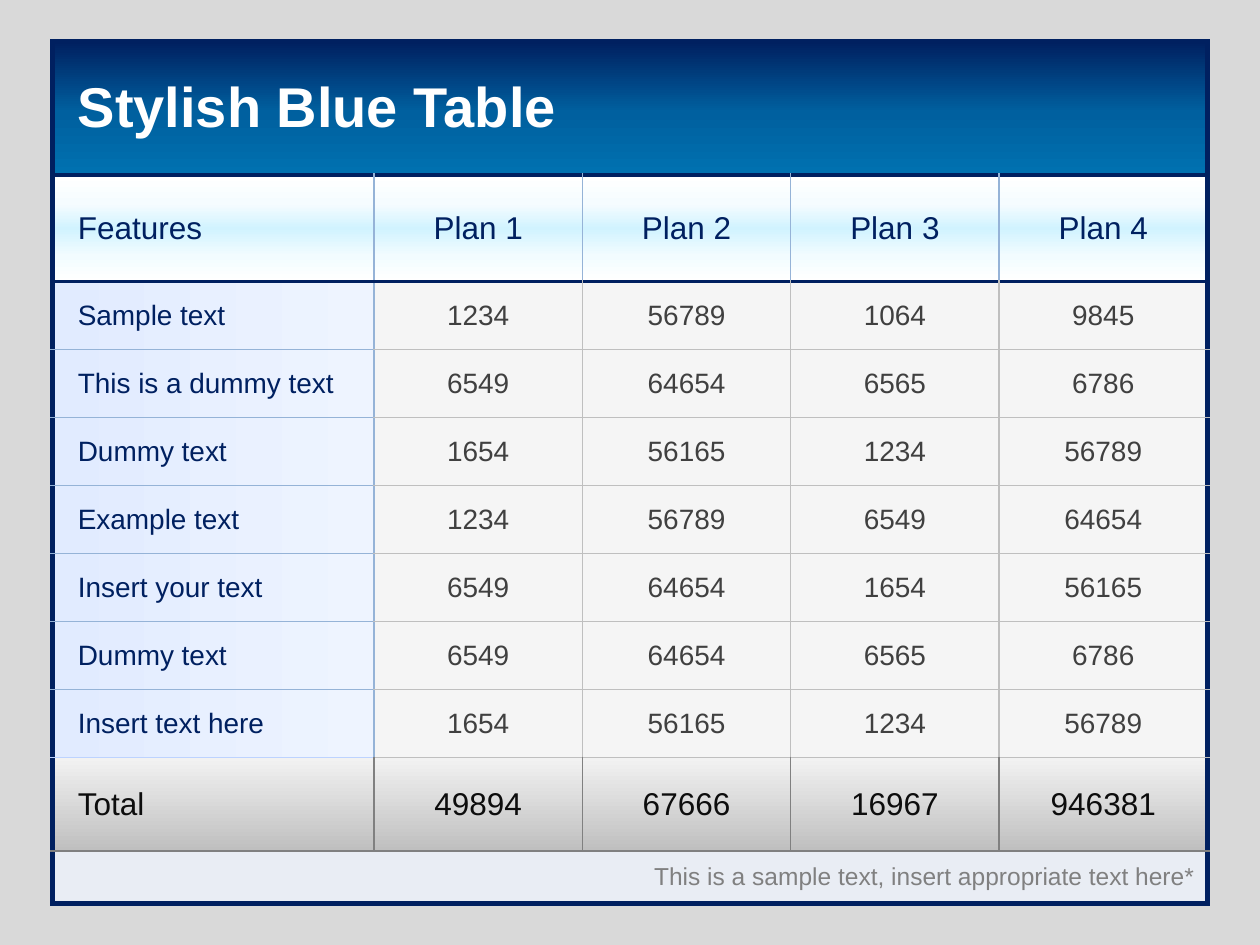
"""Build a slide with a blue pricing table of four plans."""
import lxml.etree
import pptx
import pptx.dml.color
import pptx.enum.text
import pptx.oxml.ns
import pptx.util

RGBColor = pptx.dml.color.RGBColor
Cm = pptx.util.Cm
Pt = pptx.util.Pt
PP_ALIGN = pptx.enum.text.PP_ALIGN
qn = pptx.oxml.ns.qn

NAVY = RGBColor(0x00, 0x20, 0x60)
OCEAN = RGBColor(0x00, 0x60, 0x9F)
BLUE = RGBColor(0x00, 0x71, 0xB0)
STEEL = RGBColor(0x95, 0xB3, 0xD7)
PALE = RGBColor(0xBD, 0xD3, 0xFF)
ICE = RGBColor(0xD1, 0xF3, 0xFF)
FROST = RGBColor(0xF5, 0xFC, 0xFF)
MIST = RGBColor(0xF2, 0xFC, 0xFF)
LAVENDER = RGBColor(0xE1, 0xEB, 0xFF)
LIGHT_LAVENDER = RGBColor(0xEE, 0xF4, 0xFF)
FOOTER = RGBColor(0xE9, 0xED, 0xF4)
WHITE = RGBColor(0xFF, 0xFF, 0xFF)
OFF_WHITE = RGBColor(0xF5, 0xF5, 0xF5)
LIGHT_GRAY = RGBColor(0xF2, 0xF2, 0xF2)
BACKDROP = RGBColor(0xD9, 0xD9, 0xD9)
SILVER = RGBColor(0xBF, 0xBF, 0xBF)
GRAY = RGBColor(0x80, 0x80, 0x80)
CHARCOAL = RGBColor(0x40, 0x40, 0x40)
BLACK = RGBColor(0x0D, 0x0D, 0x0D)

ROWS = [
    ("title", ["Stylish Blue Table"]),
    ("header", ["Features", "Plan 1", "Plan 2", "Plan 3", "Plan 4"]),
    ("body", ["Sample text", "1234", "56789", "1064", "9845"]),
    ("body", ["This is a dummy text", "6549", "64654", "6565", "6786"]),
    ("body", ["Dummy text", "1654", "56165", "1234", "56789"]),
    ("body", ["Example text", "1234", "56789", "6549", "64654"]),
    ("body", ["Insert your text", "6549", "64654", "1654", "56165"]),
    ("body", ["Dummy text", "6549", "64654", "6565", "6786"]),
    ("body", ["Insert text here", "1654", "56165", "1234", "56789"]),
    ("total", ["Total", "49894", "67666", "16967", "946381"]),
    ("footer", ["This is a sample text, insert appropriate text here*"]),
]
COLUMN_WIDTHS = [6.48, 4.2, 4.2, 4.2, 4.2]
ROW_HEIGHTS = {"title": 2.69, "header": 2.15, "body": 1.37, "total": 1.89, "footer": 1.05}
FONT_SIZES = {"title": 32, "header": 18, "body": 16, "total": 18, "footer": 14}
TEXT_COLORS = {"title": WHITE, "header": NAVY, "body": CHARCOAL, "total": BLACK, "footer": GRAY}
FILLS = {
    "title": (90, [(0, NAVY), (53, OCEAN), (100, BLUE)]),
    "header": (90, [(0, WHITE), (27, FROST), (50, ICE), (76, MIST), (100, WHITE)]),
    "label": (0, [(0, LAVENDER), (100, LIGHT_LAVENDER)]),
    "body": OFF_WHITE,
    "total": (270, [(0, SILVER), (100, LIGHT_GRAY)]),
    "footer": FOOTER,
}
FRAME = (NAVY, 3)
RULE = (NAVY, 2.25)
INNER_LINES = {"title": FRAME, "header": (STEEL, 1), "body": (SILVER, 1),
               "total": (GRAY, 1), "footer": FRAME}


def horizontal_line(edge, column):
    if edge in (0, len(ROWS)):
        return FRAME
    above, below = ROWS[edge - 1][0], ROWS[edge][0]
    if above in ("title", "header"):
        return RULE
    if below == "footer":
        return GRAY, 1
    if column:
        return SILVER, 1
    return (PALE if below == "total" else STEEL), 1


def vertical_line(kind, edge):
    if edge in (0, len(COLUMN_WIDTHS)):
        return FRAME
    return (STEEL, 1) if kind == "body" and edge == 1 else INNER_LINES[kind]


def add_color(parent, color):
    lxml.etree.SubElement(parent, qn("a:srgbClr"), val=str(color))


def add_border(properties, side, color, width):
    line = lxml.etree.SubElement(properties, qn("a:ln" + side), w=str(Pt(width)))
    add_color(lxml.etree.SubElement(line, qn("a:solidFill")), color)


def add_gradient(properties, angle, stops):
    gradient = lxml.etree.SubElement(properties, qn("a:gradFill"), rotWithShape="1")
    stop_list = lxml.etree.SubElement(gradient, qn("a:gsLst"))
    for position, color in stops:
        add_color(lxml.etree.SubElement(stop_list, qn("a:gs"), pos=str(position * 1000)), color)
    lxml.etree.SubElement(gradient, qn("a:lin"), ang=str(angle * 60000), scaled="0")


def style_cell(cell, kind, row, column):
    cell.vertical_anchor = pptx.enum.text.MSO_ANCHOR.MIDDLE
    if column == 0 and kind != "footer":
        cell.margin_left = Cm(0.51)
    properties = cell._tc.get_or_add_tcPr()
    add_border(properties, "L", *vertical_line(kind, column))
    add_border(properties, "R", *vertical_line(kind, column + 1))
    add_border(properties, "T", *horizontal_line(row, column))
    add_border(properties, "B", *horizontal_line(row + 1, column))
    is_label = kind == "body" and column == 0
    fill = FILLS["label" if is_label else kind]
    if isinstance(fill, RGBColor):
        cell.fill.solid()
        cell.fill.fore_color.rgb = fill
    else:
        add_gradient(properties, *fill)


def write_cell(cell, kind, column, text):
    cell.text = text
    paragraph = cell.text_frame.paragraphs[0]
    if kind == "footer":
        paragraph.alignment = PP_ALIGN.RIGHT
    else:
        paragraph.alignment = PP_ALIGN.CENTER if column else PP_ALIGN.LEFT
    font = paragraph.font
    font.name = "Arial"
    font.size = Pt(FONT_SIZES[kind])
    font.bold = kind == "title"
    font.color.rgb = NAVY if kind == "body" and column == 0 else TEXT_COLORS[kind]


def add_plan_table(page):
    heights = [ROW_HEIGHTS[kind] for kind, texts in ROWS]
    frame = page.shapes.add_table(len(ROWS), len(COLUMN_WIDTHS), Cm(1.06), Cm(0.84),
                                  Cm(sum(COLUMN_WIDTHS)), Cm(sum(heights)))
    table = frame.table
    table.first_row = table.horz_banding = False
    for column, width in zip(table.columns, COLUMN_WIDTHS):
        column.width = Cm(width)
    for row, (kind, texts) in enumerate(ROWS):
        table.rows[row].height = Cm(heights[row])
        if len(texts) == 1:
            table.cell(row, 0).merge(table.cell(row, len(COLUMN_WIDTHS) - 1))
        for column in range(len(COLUMN_WIDTHS)):
            style_cell(table.cell(row, column), kind, row, column)
        for column, text in enumerate(texts):
            write_cell(table.cell(row, column), kind, column, text)


def main():
    deck = pptx.Presentation()
    deck.slide_width, deck.slide_height = Cm(25.4), Cm(19.05)
    page = deck.slides.add_slide(deck.slide_layouts[6])
    page.background.fill.solid()
    page.background.fill.fore_color.rgb = BACKDROP
    add_plan_table(page)
    deck.save("out.pptx")


if __name__ == "__main__":
    main()
